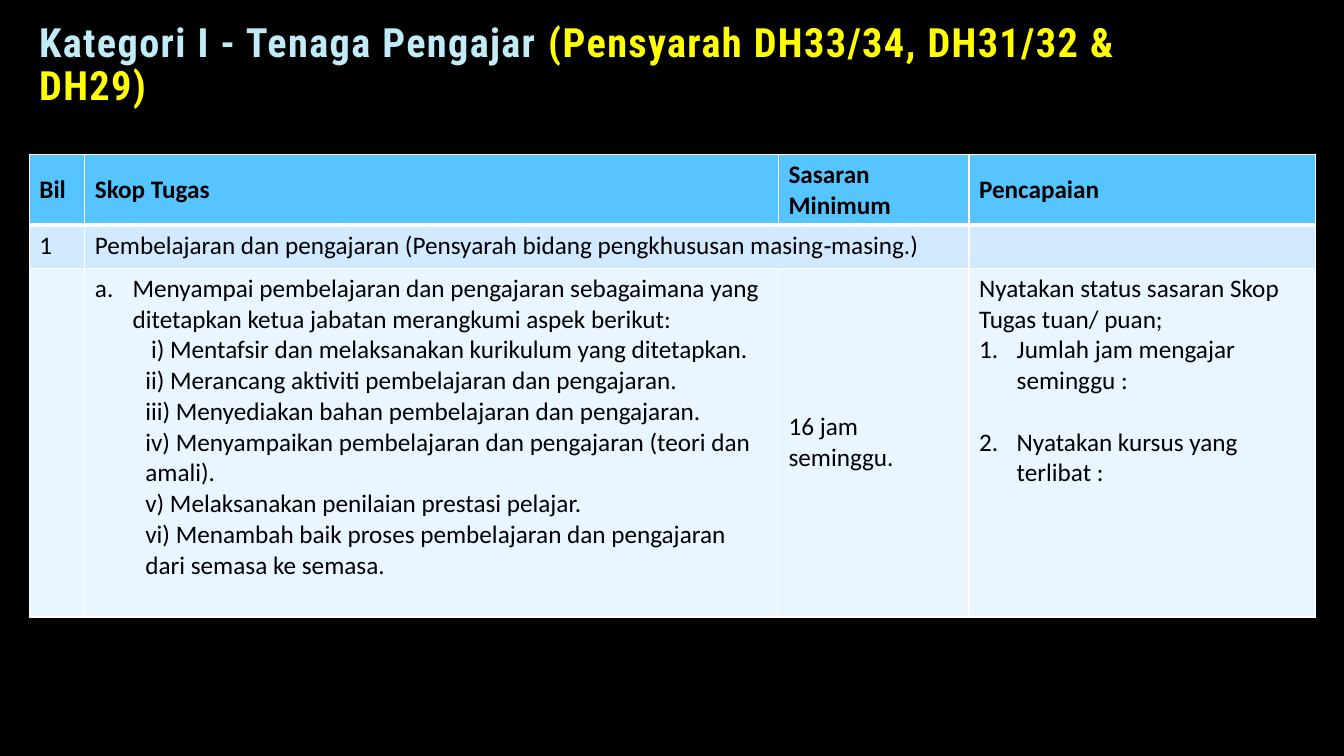
from pptx import Presentation, util as u
from pptx.dml.color import RGBColor
from pptx.enum import text
from pptx.oxml import parse_xml
from pptx.oxml.ns import nsdecls

# Content
TITLE = ["Kategori I - Tenaga Pengajar ", "(Pensyarah DH33/34, DH31/32 & DH29)"]
HEADER = ["Bil", "Skop Tugas", "Sasaran Minimum", "Pencapaian"]
SCOPE = "Pembelajaran dan pengajaran (Pensyarah bidang pengkhususan masing‐masing.)"
TASK = ("Menyampai pembelajaran dan pengajaran sebagaimana yang "
        "ditetapkan ketua jabatan merangkumi aspek berikut:")
ASPECTS = [
    " i) Mentafsir dan melaksanakan kurikulum yang ditetapkan.",
    "ii) Merancang aktiviti pembelajaran dan pengajaran.",
    "iii) Menyediakan bahan pembelajaran dan pengajaran.",
    "iv) Menyampaikan pembelajaran dan pengajaran (teori dan amali).",
    "v) Melaksanakan penilaian prestasi pelajar.",
    "vi) Menambah baik proses pembelajaran dan pengajaran dari semasa ke semasa.",
]
STATUS = "Nyatakan status sasaran Skop Tugas tuan/ puan;"
REPORTS = ["Jumlah jam mengajar seminggu :", "Nyatakan kursus yang terlibat :"]
ROWS = [
    HEADER,
    ["1", SCOPE, "", ""],
    ["", "\n".join([TASK] + ASPECTS), "16 jam seminggu.", "\n".join([STATUS] + REPORTS)],
]

# Style and layout
BLACK = RGBColor(0x00, 0x00, 0x00)
TITLE_COLOURS = [RGBColor(0xC1, 0xEB, 0xF7), RGBColor(0xFF, 0xFF, 0x00)]
ROW_FILLS = [RGBColor(0x56, 0xC5, 0xFF), RGBColor(0xD1, 0xEA, 0xFF), RGBColor(0xE9, 0xF5, 0xFF)]
COLUMN_WIDTHS = [1.4, 17.48, 4.8, 8.74]
ROW_HEIGHTS = [1.78, 1.09, 8.79]
LEFT, TABLE_TOP = 0.74, 3.89
HANGING, ASPECT_INDENT = u.Cm(0.95), u.Cm(1.27)


def set_borders(cell, top, bottom):
    """Draw white cell edges; top and bottom are widths in points."""
    properties = cell._tc.get_or_add_tcPr()
    for place, (side, width) in enumerate(zip("LRTB", (1, 1, top, bottom))):
        properties.insert(place, parse_xml(
            f'<a:ln{side} {nsdecls("a")} w="{u.Pt(width)}"><a:solidFill>'
            f'<a:srgbClr val="FFFFFF"/></a:solidFill></a:ln{side}>'))


def set_number(para, style, start=1):
    """Give a paragraph a hanging automatic number."""
    properties = para._p.get_or_add_pPr()
    properties.set("marL", str(HANGING))
    properties.set("indent", str(-HANGING))
    properties.append(parse_xml(
        f'<a:buAutoNum {nsdecls("a")} type="{style}" startAt="{start}"/>'))


deck = Presentation()
deck.slide_width, deck.slide_height = u.Cm(33.87), u.Cm(19.05)
page = deck.slides.add_slide(deck.slide_layouts[6])
page.background.fill.solid()
page.background.fill.fore_color.rgb = BLACK

# Title
box = page.shapes.add_textbox(u.Cm(LEFT), u.Cm(1.19), u.Cm(28.88), u.Cm(1.7))
frame = box.text_frame
frame.word_wrap = True
frame.vertical_anchor = text.MSO_ANCHOR.BOTTOM
para = frame.paragraphs[0]
para.line_spacing = 0.9
for words, colour in zip(TITLE, TITLE_COLOURS):
    span = para.add_run()
    span.text = words
    span.font.name, span.font.size, span.font.bold = "Roboto Condensed", u.Pt(28.8), True
    span.font.color.rgb = colour
    span.font._element.set("spc", "100")

# Table
table = page.shapes.add_table(
    len(ROWS), len(HEADER), u.Cm(LEFT), u.Cm(TABLE_TOP),
    u.Cm(sum(COLUMN_WIDTHS)), u.Cm(sum(ROW_HEIGHTS))).table
table.horz_banding = False
for column, width in zip(table.columns, COLUMN_WIDTHS):
    column.width = u.Cm(width)
for row, height in zip(table.rows, ROW_HEIGHTS):
    row.height = u.Cm(height)
table.cell(1, 1).merge(table.cell(1, 2))

for r, (values, fill) in enumerate(zip(ROWS, ROW_FILLS)):
    for c, value in enumerate(values):
        cell = table.cell(r, c)
        cell.fill.solid()
        cell.fill.fore_color.rgb = fill
        set_borders(cell, top=3 if r == 1 else 1, bottom=3 if r == 0 else 1)
        if not cell.is_spanned:
            cell.text_frame.text = value
        if r == 0 or (r, c) == (2, 2):
            cell.vertical_anchor = text.MSO_ANCHOR.MIDDLE

# Numbered lists in the last row
task, *aspects = table.cell(2, 1).text_frame.paragraphs
set_number(task, "alphaLcPeriod")
for para in aspects:
    para.level = 1
    para._p.get_or_add_pPr().set("marL", str(ASPECT_INDENT))
    para._p.get_or_add_pPr().set("indent", "0")
reports = table.cell(2, 3).text_frame.paragraphs[1:]
reports[-1].space_before = u.Pt(22)
for number, para in enumerate(reports, 1):
    set_number(para, "arabicPeriod", number)

# Table fonts
for r, row in enumerate(table.rows):
    for cell in row.cells:
        for para in cell.text_frame.paragraphs:
            para.font.size = u.Pt(18)
            for span in para.runs:
                span.font.name, span.font.size = "Calibri", u.Pt(18)
                span.font.bold = r == 0
                span.font.color.rgb = BLACK

deck.save("out.pptx")
